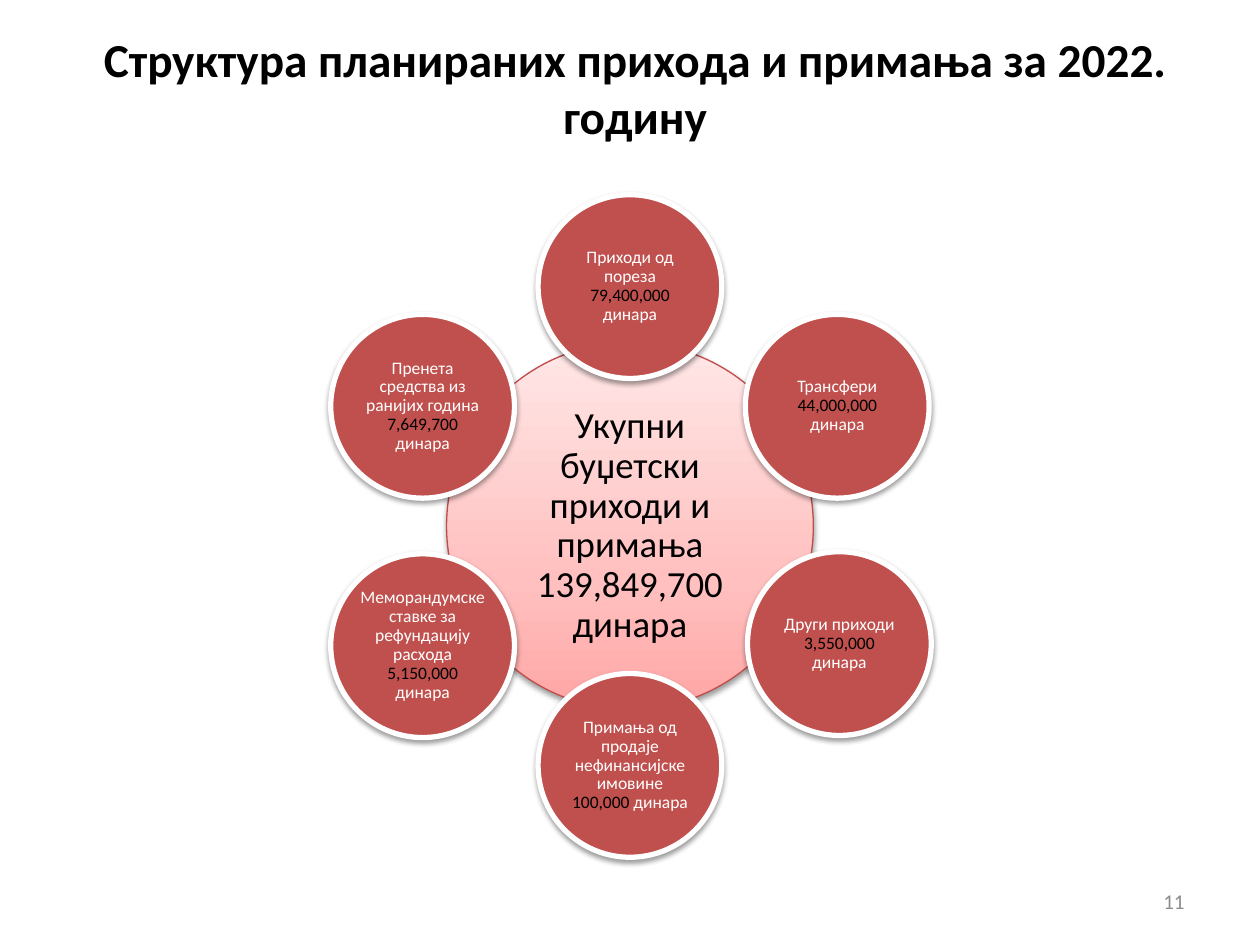
from copy import deepcopy
from dataclasses import dataclass
from math import cos, radians, sin

from lxml.etree import SubElement as Sub
from pptx import Presentation
from pptx.dml.color import RGBColor as Rgb
from pptx.enum.shapes import MSO_SHAPE as Kind
from pptx.enum.text import MSO_ANCHOR as Anchor, PP_ALIGN as Align
from pptx.oxml.ns import qn
from pptx.util import Pt


@dataclass(frozen=True)
class Theme:
    font: str = "Calibri"
    black: str = "000000"
    white: str = "FFFFFF"
    gray: str = "8C8C8C"
    red: str = "C0504D"
    edge: str = "BF4C48"
    fade: tuple = ((0, "FFA6A5"), (0.35, "FFC0BF"), (1, "FFE7E7"))
    head: int = 27
    core: int = 21
    note: int = 12
    small: int = 10


THEME = Theme()
MID = (360, 300.6)
RING = 136.8
HUB = 209.6
DISC = 105
UNIT = "динара"
ITEMS = [
    ("Приходи од пореза", "79,400,000", (0, 0)),
    ("Трансфери", "44,000,000", (0, 0)),
    ("Други приходи", "3,550,000", (1.2, -1.2)),
    ("Примања од продаје нефинансијске имовине", "100,000", (0, 0)),
    ("Меморандумске ставке за рефундацију расхода", "5,150,000", (0, 0)),
    ("Пренета средства из ранијих година", "7,649,700", (0, 0)),
]


def put(obj, vals):
    for name, val in vals.items():
        setattr(obj, name, val)


def add_run(para, text, size, color, bold=False):
    run = para.add_run()
    run.text = text
    put(run.font, {"name": THEME.font, "size": Pt(size), "bold": bold})
    run.font.color.rgb = Rgb.from_string(color)


def set_frame(shape, align, gap=None, line=1.0):
    frame = shape.text_frame
    put(frame, {"word_wrap": True, "vertical_anchor": Anchor.MIDDLE})
    if gap is not None:
        sides = ("left", "top", "right", "bottom")
        put(frame, {f"margin_{side}": Pt(gap) for side in sides})
    para = frame.paragraphs[0]
    put(para, {"alignment": align, "line_spacing": line})
    return para


def add_text(slide, box, text, align, size, color, bold=False):
    shape = slide.shapes.add_textbox(*map(Pt, box))
    add_run(set_frame(shape, align), text, size, color, bold)


def add_shade(shape):
    shape.shadow.inherit = False
    root = shape._element.spPr.find(qn("a:effectLst"))
    shade = Sub(root, qn("a:outerShdw"), blurRad=str(Pt(3.1)),
                dist=str(Pt(1.6)), dir="5400000", rotWithShape="0")
    tone = Sub(shade, qn("a:srgbClr"), val=THEME.black)
    Sub(tone, qn("a:alpha"), val="38000")


def add_disc(slide, x, y, size, edge, width):
    box = (x - size / 2, y - size / 2, size, size)
    disc = slide.shapes.add_shape(Kind.OVAL, *map(Pt, box))
    disc.line.color.rgb = Rgb.from_string(edge)
    disc.line.width = Pt(width)
    add_shade(disc)
    return disc


def add_hub(slide):
    hub = add_disc(slide, *MID, HUB, THEME.edge, 0.75)
    hub.fill.gradient()
    hub.fill.gradient_angle = 90
    stops = hub._element.spPr.find(qn("a:gradFill")).find(qn("a:gsLst"))
    stops.append(deepcopy(stops[0]))
    for stop, (pos, color) in zip(hub.fill.gradient_stops, THEME.fade):
        stop.position = pos
        stop.color.rgb = Rgb.from_string(color)
    para = set_frame(hub, Align.CENTER, 2, 0.9)
    text = f"Укупни буџетски приходи и примања 139,849,700 {UNIT}"
    add_run(para, text, THEME.core, THEME.black)


def add_item(slide, turn, label, sum_, shift):
    x = MID[0] + RING * sin(turn) + shift[0]
    y = MID[1] - RING * cos(turn) + shift[1]
    disc = add_disc(slide, x, y, DISC, THEME.white, 3)
    disc.fill.solid()
    disc.fill.fore_color.rgb = Rgb.from_string(THEME.red)
    para = set_frame(disc, Align.CENTER, 1, 0.9)
    add_run(para, label, THEME.small, THEME.white)
    para.add_line_break()
    add_run(para, f"{sum_} ", THEME.small, THEME.black)
    add_run(para, UNIT, THEME.small, THEME.white)


def main():
    deck = Presentation()
    put(deck, {"slide_width": Pt(720), "slide_height": Pt(540)})
    slide = deck.slides.add_slide(deck.slide_layouts[6])
    add_text(slide, (39, 19.5, 648, 61),
             "Структура планираних прихода и примања за 2022. годину",
             Align.CENTER, THEME.head, THEME.black, True)
    add_text(slide, (516, 500.5, 168, 28.8), "11",
             Align.RIGHT, THEME.note, THEME.gray)
    add_hub(slide)
    for i, item in enumerate(ITEMS):
        add_item(slide, radians(360 / len(ITEMS) * i), *item)
    deck.save("out.pptx")


if __name__ == "__main__":
    main()
